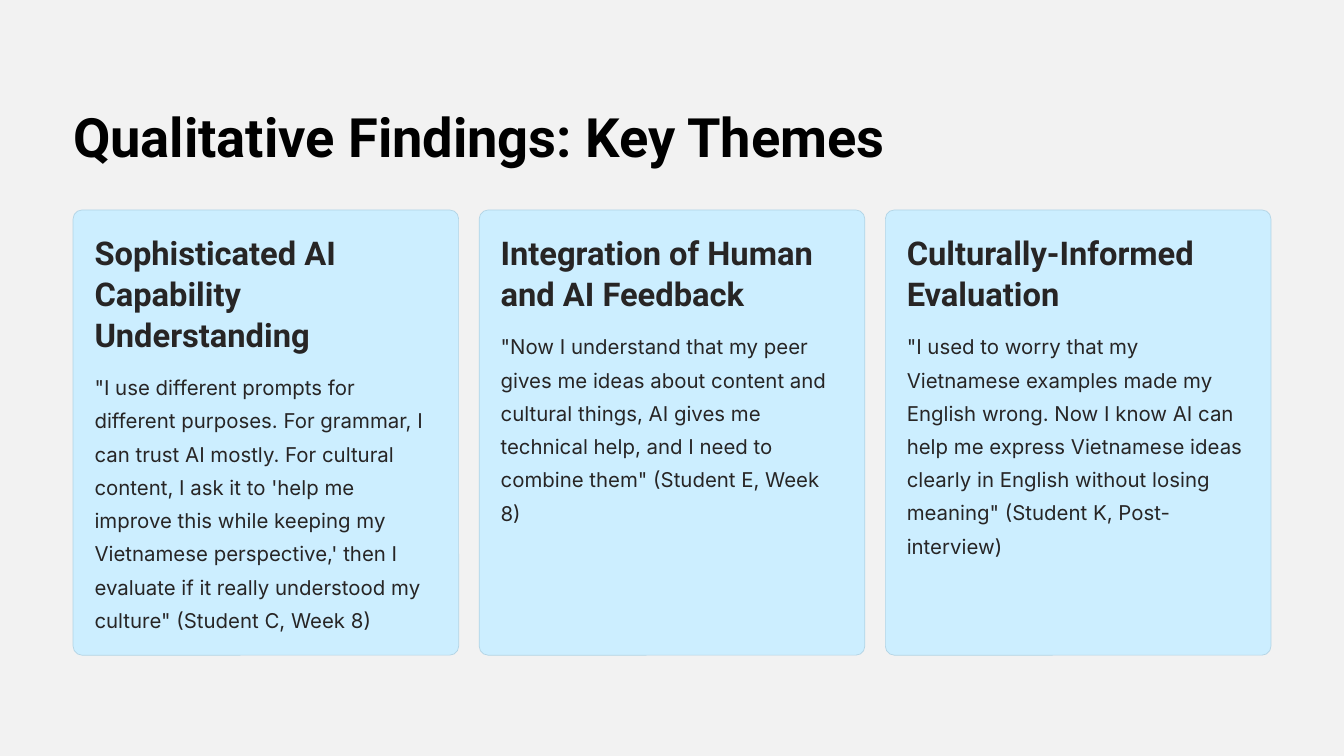
from pptx import Presentation
from pptx.dml.color import RGBColor
from pptx.enum.shapes import MSO_SHAPE as Shape
from pptx.enum.text import MSO_ANCHOR as Anchor, MSO_AUTO_SIZE as Fit, PP_ALIGN as Align
from pptx.util import Inches, Pt

INK = "272525"
CARDS = [
    ("Sophisticated AI Capability Understanding", 3,
     "\"I use different prompts for different purposes. For grammar, I can trust AI mostly. "
     "For cultural content, I ask it to 'help me improve this while keeping my Vietnamese "
     "perspective,' then I evaluate if it really understood my culture\" (Student C, Week 8)", 8),
    ("Integration of Human and AI Feedback", 2,
     "\"Now I understand that my peer gives me ideas about content and cultural things, AI gives "
     "me technical help, and I need to combine them\" (Student E, Week 8)", 6),
    ("Culturally-Informed Evaluation", 2,
     "\"I used to worry that my Vietnamese examples made my English wrong. Now I know AI can help "
     "me express Vietnamese ideas clearly in English without losing meaning\" "
     "(Student K, Post-interview)", 7),
]


def paint(color, code):
    color.rgb = RGBColor.from_string(code)


def write(frame, text, face, size, lead, code, bold=False, wrap=True):
    frame.text = text
    frame.word_wrap = wrap
    frame.auto_size = Fit.NONE
    frame.vertical_anchor = Anchor.TOP
    frame.margin_left = frame.margin_right = 0
    frame.margin_top = frame.margin_bottom = 0
    para = frame.paragraphs[0]
    para.alignment = Align.LEFT
    para.line_spacing = Pt(lead)
    para.space_before = Pt(0)
    font = para.runs[0].font
    font.name, font.size, font.bold = face, Pt(size), bold
    paint(font.color, code)


def add_title(slide, left, top, width, height):
    title = slide.shapes.title
    title.left, title.top = Inches(left), Inches(top)
    title.width, title.height = Inches(width), Inches(height)
    write(title.text_frame, "Qualitative Findings: Key Themes",
          "Roboto", 46.5, 58.5, "000000", True, False)


def add_card(slide, left, top, width, height, head, rows, quote, lines):
    card = slide.shapes.add_shape(
        Shape.ROUNDED_RECTANGLE, Inches(left), Inches(top), Inches(width), Inches(height))
    card.adjustments[0] = 0.023
    card.shadow.inherit = False
    card.fill.solid()
    paint(card.fill.fore_color, "CCEEFF")
    paint(card.line.color, "B2D4E5")
    card.line.width = Pt(0.6)

    inset, gap = 0.255, 0.15
    y = top + inset
    for text, count, face, size, lead, bold in (
            (head, rows, "Roboto", 28, 35, True),
            (quote, lines, "Inter", 17.5, 28.5, False)):
        tall = count * lead / 72
        box = slide.shapes.add_textbox(
            Inches(left + inset), Inches(y), Inches(width - 2 * inset), Inches(tall))
        write(box.text_frame, text, face, size, lead, INK, bold)
        y += tall + gap


def add_cards(slide, left, top, width, height):
    gap = 0.245
    wide = (width - gap * (len(CARDS) - 1)) / len(CARDS)
    for i, card in enumerate(CARDS):
        add_card(slide, left + i * (wide + gap), top, wide, height, *card)


def main():
    deck = Presentation()
    deck.slide_width, deck.slide_height = Inches(16), Inches(9)
    slide = deck.slides.add_slide(deck.slide_layouts[5])
    fill = slide.background.fill
    fill.solid()
    paint(fill.fore_color, "F2F2F2")
    add_title(slide, 0.87, 1.19, 9.96, 0.81)
    add_cards(slide, 0.87, 2.5, 14.26, 5.3)
    deck.save("out.pptx")


if __name__ == "__main__":
    main()
